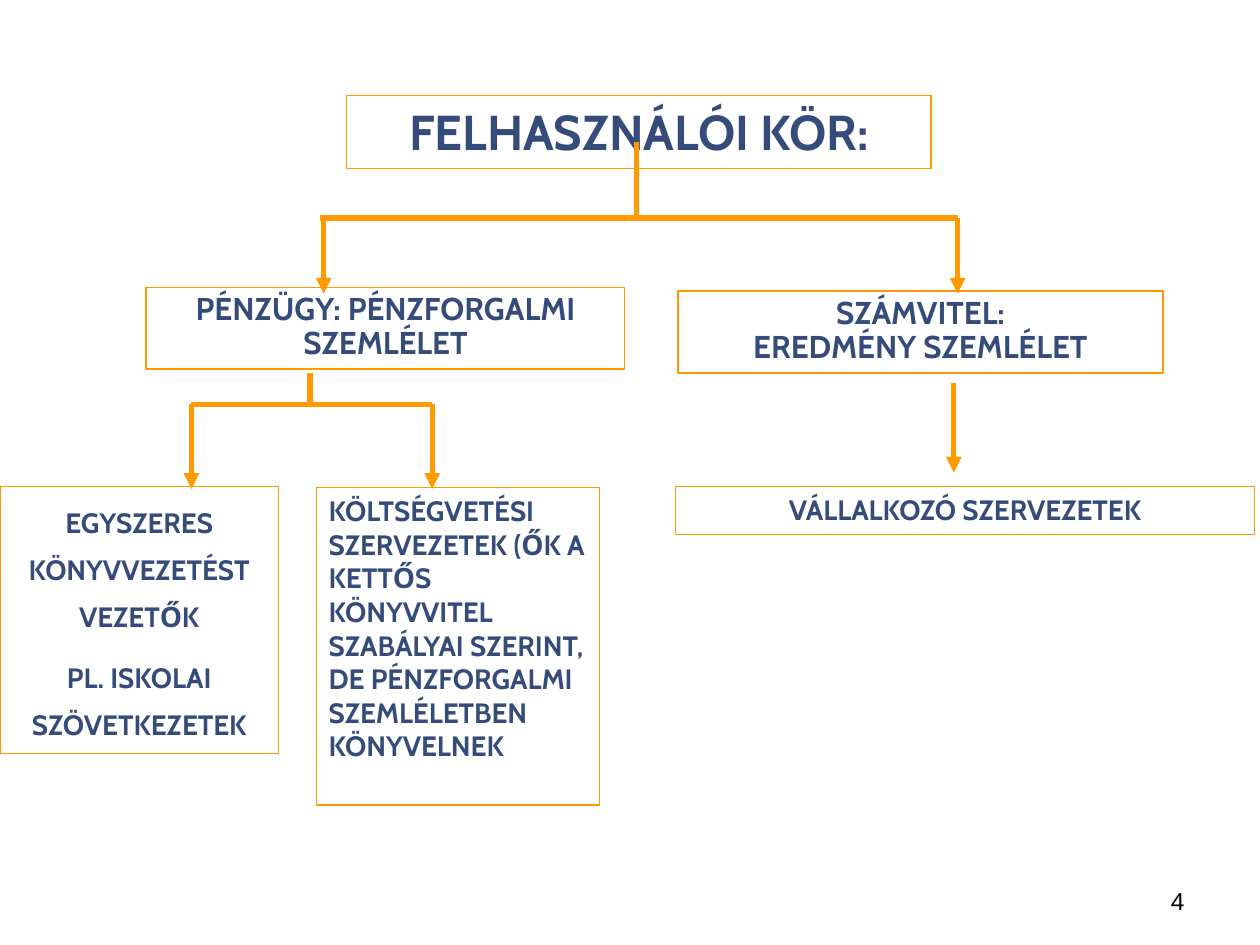
from lxml import etree
from pptx import Presentation
from pptx import util as u
from pptx.dml import color
from pptx.enum import shapes, text
from pptx.oxml import ns

COLORS = {"orange": "FF9900", "navy": "354C7B", "white": "FFFFFF", "black": "000000"}
CENTER, LEFT, RIGHT = text.PP_ALIGN.CENTER, text.PP_ALIGN.LEFT, text.PP_ALIGN.RIGHT


def rgb(name):
    return color.RGBColor.from_string(COLORS[name])


def write(frame, paragraphs, font, layout, anchor):
    frame.word_wrap = True
    frame.auto_size = text.MSO_AUTO_SIZE.NONE
    frame.vertical_anchor = anchor
    for i, words in enumerate(paragraphs):
        para = frame.paragraphs[0] if i == 0 else frame.add_paragraph()
        para.text = words
        para.space_before = u.Pt(8 if i else 0)
        for key, value in layout.items():
            setattr(para, key, value)
        for run in para.runs:
            run.font.color.rgb = rgb(font["color"])
            for key in ("name", "size", "bold"):
                setattr(run.font, key, font[key])


deck = Presentation()
deck.slide_width, deck.slide_height = u.Inches(10), u.Inches(7.5)
slide = deck.slides.add_slide(deck.slide_layouts[6])

# Boxes: left, top, width, height, size, alignment, line spacing, paragraphs
boxes = [
    (2.75, 0.76, 4.64, 0.58, 28, CENTER, 1.0, ["FELHASZNÁLÓI KÖR:"]),
    (1.16, 2.28, 3.8, 0.65, 18, CENTER, 0.9, ["PÉNZÜGY: PÉNZFORGALMI SZEMLÉLET"]),
    (5.38, 2.31, 3.85, 0.65, 18, CENTER, 0.9, ["SZÁMVITEL:\nEREDMÉNY SZEMLÉLET"]),
    (0, 3.86, 2.21, 2.12, 16, CENTER, 1.4,
     ["EGYSZERES KÖNYVVEZETÉST VEZETŐK", "PL. ISKOLAI SZÖVETKEZETEK"]),
    (2.51, 3.87, 2.25, 2.52, 16, LEFT, 1.0,
     ["KÖLTSÉGVETÉSI SZERVEZETEK (ŐK A KETTŐS KÖNYVVITEL SZABÁLYAI SZERINT, "
      "DE PÉNZFORGALMI SZEMLÉLETBEN KÖNYVELNEK"]),
    (5.36, 3.86, 4.6, 0.38, 16, CENTER, 1.0, ["VÁLLALKOZÓ SZERVEZETEK"]),
]
for left, top, width, height, size, align, spacing, paragraphs in boxes:
    box = slide.shapes.add_shape(
        shapes.MSO_SHAPE.RECTANGLE,
        u.Inches(left), u.Inches(top), u.Inches(width), u.Inches(height))
    box.shadow.inherit = False
    box.fill.solid()
    box.fill.fore_color.rgb = rgb("white")
    box.line.color.rgb = rgb("orange")
    box.line.width = u.Pt(0.75)
    write(box.text_frame, paragraphs,
          {"name": "Cabin", "size": u.Pt(size), "bold": True, "color": "navy"},
          {"alignment": align, "line_spacing": spacing}, text.MSO_ANCHOR.TOP)

# Branches: x1, y1, x2, y2, arrowhead
branches = [
    # From the title to the two approaches
    (5.05, 1.13, 5.05, 1.73, False),
    (2.54, 1.73, 7.6, 1.73, False),
    (2.57, 1.73, 2.57, 2.33, True),
    (7.6, 1.73, 7.6, 2.33, True),
    # From the cash approach to its users
    (2.46, 2.96, 2.46, 3.21, False),
    (1.52, 3.21, 3.43, 3.21, False),
    (1.52, 3.21, 1.52, 3.88, True),
    (3.43, 3.21, 3.43, 3.88, True),
    # From the accrual approach to its users
    (7.57, 3.04, 7.57, 3.75, True),
]
for x1, y1, x2, y2, arrowhead in branches:
    branch = slide.shapes.add_connector(
        shapes.MSO_CONNECTOR.STRAIGHT,
        u.Inches(x1), u.Inches(y1), u.Inches(x2), u.Inches(y2))
    branch.line.color.rgb = rgb("orange")
    branch.line.width = u.Pt(3)
    if arrowhead:
        etree.SubElement(branch.line._get_or_add_ln(), ns.qn("a:tailEnd"), type="triangle")
    etree.SubElement(branch._element.spPr, ns.qn("a:effectLst"))

# Page number
page_number = slide.shapes.add_textbox(
    u.Inches(7.17), u.Inches(6.95), u.Inches(2.33), u.Inches(0.4))
write(page_number.text_frame, ["4"],
      {"name": "Arial", "size": u.Pt(14), "bold": False, "color": "black"},
      {"alignment": RIGHT}, text.MSO_ANCHOR.MIDDLE)

deck.save("out.pptx")
